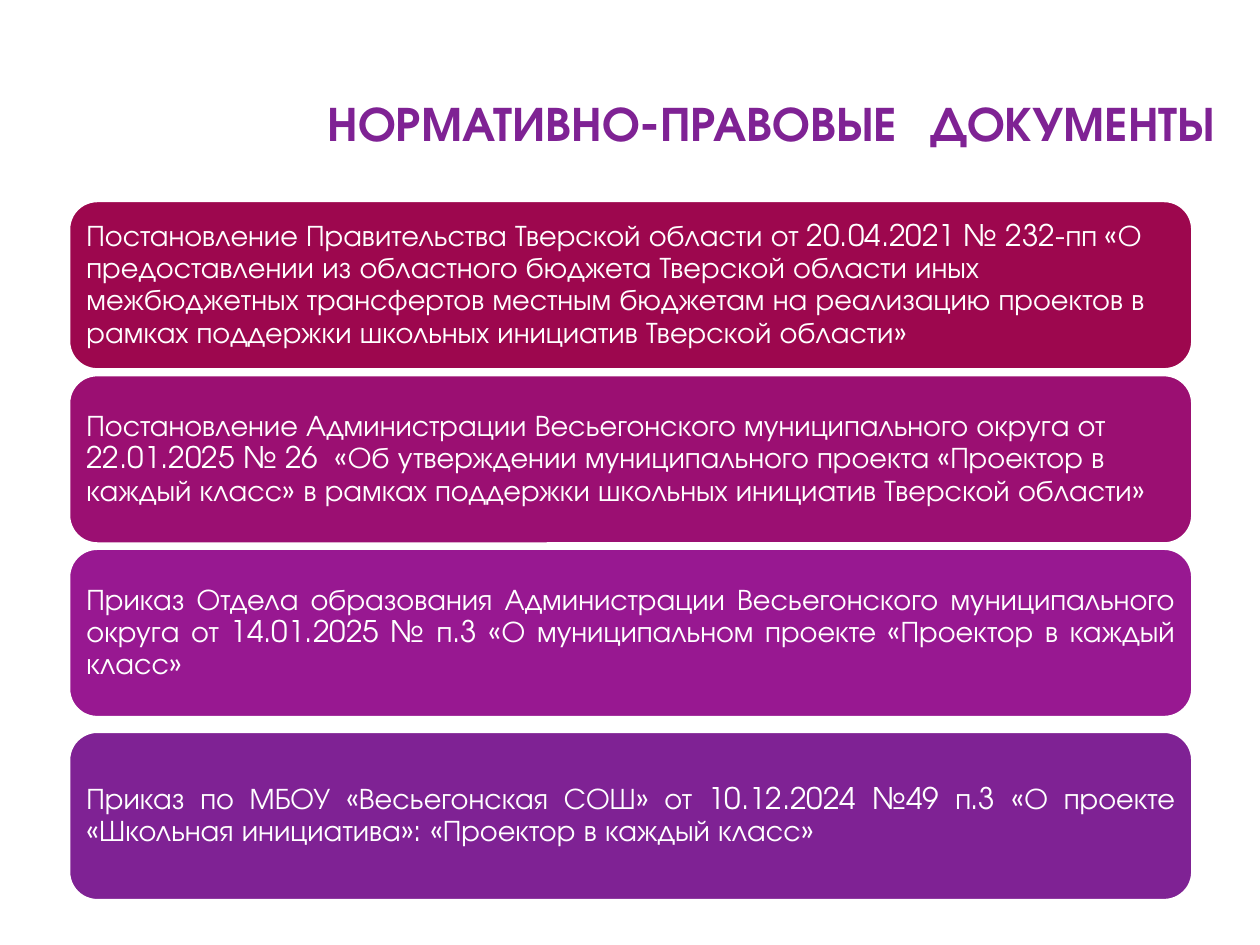
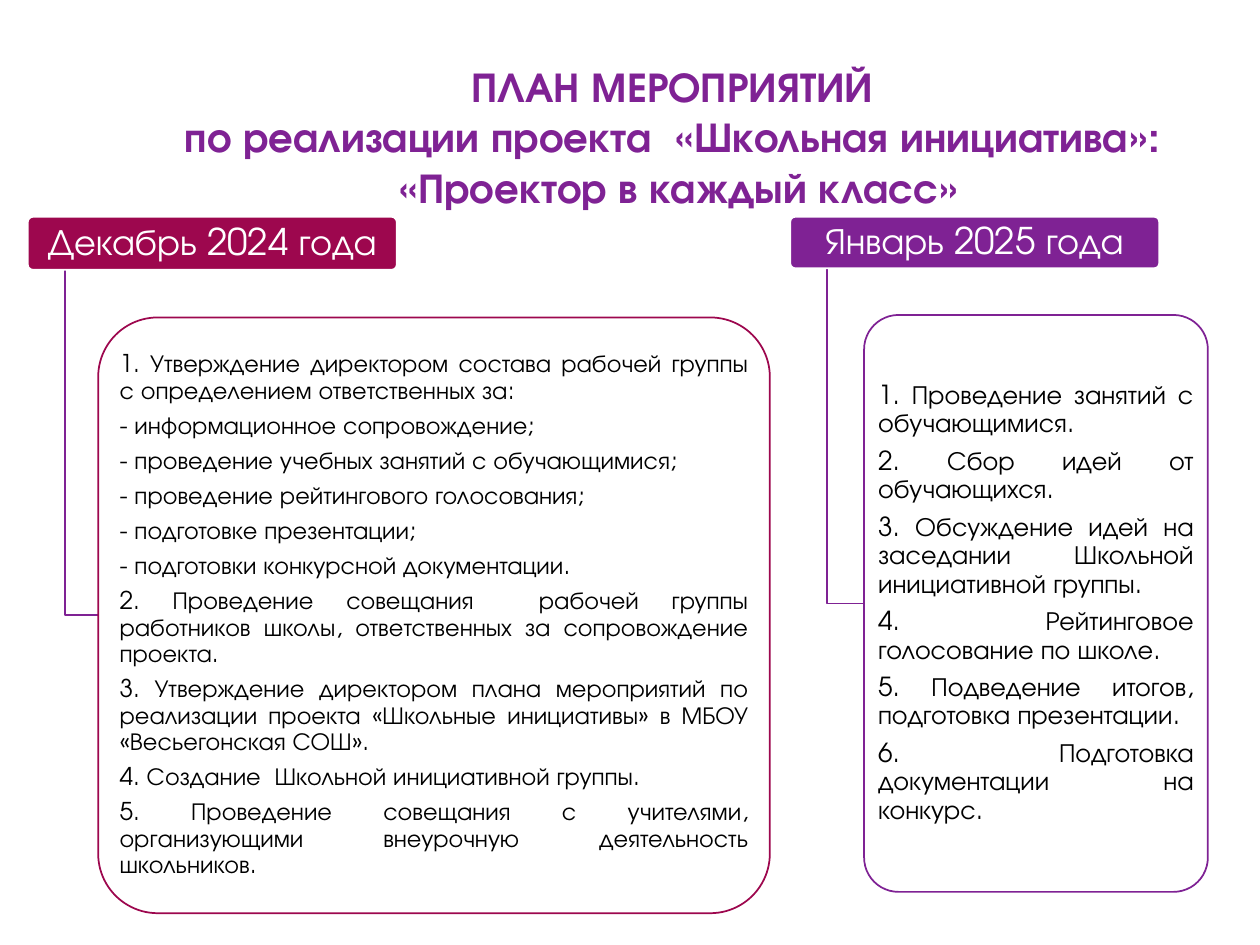
import pptx
import pptx.util
import pptx.dml.color
import pptx.enum.shapes
import pptx.enum.text
import lxml.etree

Cm = pptx.util.Cm
Pt = pptx.util.Pt
ALIGN = pptx.enum.text.PP_ALIGN
ROUNDED = pptx.enum.shapes.MSO_SHAPE.ROUNDED_RECTANGLE

FONT = "TeX Gyre Adventor"
WHITE, BLACK, CRIMSON, PURPLE = "FFFFFF", "000000", "9D074E", "7F2294"
TITLE_AREA = dict(inset_x=0.25, inset_y=0.13)


def colour(code):
    return pptx.dml.color.RGBColor.from_string(code)


def write(box, paragraphs, size, ink, align, inset_x, inset_y, bold=False, spacing=None):
    frame = box.text_frame
    frame_format = {
        "word_wrap": True,
        "vertical_anchor": pptx.enum.text.MSO_ANCHOR.MIDDLE,
        "margin_left": Cm(inset_x),
        "margin_right": Cm(inset_x),
        "margin_top": Cm(inset_y),
        "margin_bottom": Cm(inset_y),
    }
    for name, value in frame_format.items():
        setattr(frame, name, value)
    for index, spans in enumerate(paragraphs):
        para = frame.add_paragraph() if index else frame.paragraphs[0]
        para_format = {"alignment": align}
        if spacing:
            para_format |= {"line_spacing": spacing, "space_after": Pt(size * 0.35)}
        for name, value in para_format.items():
            setattr(para, name, value)
        if isinstance(spans, str):
            spans = [(spans, size)]
        for text, span_size in spans:
            for line_index, line in enumerate(text.split("\n")):
                if line_index:
                    para.add_line_break()
                span = para.add_run()
                span.text = line
                span_format = {"name": FONT, "size": Pt(span_size), "bold": bold}
                for name, value in span_format.items():
                    setattr(span.font, name, value)
                span.font.color.rgb = colour(ink)


deck = pptx.Presentation()
deck.slide_width, deck.slide_height = Cm(25.4), Cm(19.05)
blank = deck.slide_layouts[6]

page = deck.slides.add_slide(blank)
title = page.shapes.add_textbox(Cm(2.31), Cm(0.91), Cm(26.49), Cm(2.77))
title_spans = [("НОРМАТИВНО-ПРАВОВЫЕ ", 28), (" ", 40), ("ДОКУМЕНТЫ", 28)]
write(title, [title_spans], 28, PURPLE, ALIGN.CENTER, bold=True, **TITLE_AREA)

documents = [
    (4.06, CRIMSON, ALIGN.LEFT,
     "Постановление Правительства Тверской области от 20.04.2021 № 232-пп «О предоставлении "
     "из областного бюджета Тверской области иных межбюджетных трансфертов местным бюджетам "
     "на реализацию проектов в рамках поддержки школьных инициатив Тверской области»"),
    (7.57, "9B0F72", ALIGN.LEFT,
     "Постановление Администрации Весьегонского муниципального округа от 22.01.2025 № 26  "
     "«Об утверждении муниципального проекта «Проектор в каждый класс» в рамках поддержки "
     "школьных инициатив Тверской области»"),
    (11.07, "981891", ALIGN.JUSTIFY,
     "Приказ Отдела образования Администрации Весьегонского муниципального округа "
     "от 14.01.2025 № п.3 «О муниципальном проекте «Проектор в каждый класс»"),
    (14.76, PURPLE, ALIGN.JUSTIFY,
     "Приказ по МБОУ «Весьегонская СОШ» от 10.12.2024 №49 п.3 «О проекте "
     "«Школьная инициатива»: «Проектор в каждый класс»"),
]
for top, fill, align, text in documents:
    card = page.shapes.add_shape(ROUNDED, Cm(1.4), Cm(top), Cm(22.63), Cm(3.38))
    card.shadow.inherit = False
    card.fill.solid()
    card.fill.fore_color.rgb = colour(fill)
    card.line.color.rgb = colour(WHITE)
    card.line.width = Pt(1)
    write(card, [text], 17, WHITE, align, 0.18, 0.18, spacing=0.9)

page = deck.slides.add_slide(blank)
months = [
    dict(
        name="Декабрь 2024 года", accent=CRIMSON, size=14,
        head=(0.56, 4.37, 7.44, 1.07), body=(1.98, 6.4, 13.54, 12.01),
        steps=[
            "1. Утверждение директором состава рабочей группы с определением ответственных за:",
            "- информационное сопровождение;",
            "- проведение учебных занятий с обучающимися;",
            "- проведение рейтингового голосования;",
            "- подготовке презентации;",
            "- подготовки конкурсной документации.",
            "2. Проведение совещания  рабочей группы работников школы, "
            "ответственных за сопровождение проекта.",
            "3. Утверждение директором плана мероприятий по реализации проекта "
            "«Школьные инициативы» в МБОУ «Весьегонская СОШ».",
            "4. Создание  Школьной инициативной группы.",
            "5. Проведение совещания с учителями, "
            "организующими внеурочную деятельность\nшкольников.",
        ],
    ),
    dict(
        name="Январь 2025 года", accent=PURPLE, size=15,
        head=(15.93, 4.37, 7.44, 1.04), body=(17.42, 6.35, 6.93, 11.63),
        steps=[
            "1. Проведение занятий с обучающимися.",
            "2. Сбор идей от обучающихся.",
            "3. Обсуждение идей на заседании Школьной инициативной группы.",
            "4. Рейтинговое голосование по школе.",
            "5. Подведение итогов, подготовка презентации.",
            "6. Подготовка документации на конкурс.",
        ],
    ),
]
for month in months:
    left, top, width, height = month["head"]
    body_left, body_top, body_width, body_height = month["body"]

    elbow_x = Cm(left + width / 10)
    elbow_y = Cm(body_top + body_height / 2)
    outline = page.shapes.build_freeform(elbow_x, Cm(top + height))
    outline.add_line_segments([(elbow_x, elbow_y), (Cm(body_left), elbow_y)], close=False)
    elbow = outline.convert_to_shape()
    elbow.fill.background()

    head = page.shapes.add_shape(ROUNDED, *map(Cm, month["head"]))
    body = page.shapes.add_shape(ROUNDED, *map(Cm, month["body"]))
    for box, fill in ((head, month["accent"]), (body, WHITE)):
        box.adjustments[0] = 0.1
        box.fill.solid()
        box.fill.fore_color.rgb = colour(fill)
    for shape, line in ((elbow, PURPLE), (head, WHITE), (body, month["accent"])):
        shape.shadow.inherit = False
        shape.line.color.rgb = colour(line)
        shape.line.width = Pt(1)

    tint = body.fill._xPr.find(".//" + pptx.oxml.ns.qn("a:srgbClr"))
    lxml.etree.SubElement(tint, pptx.oxml.ns.qn("a:alpha"), val="90000")

    write(head, [month["name"]], 21, WHITE, ALIGN.CENTER, 0.1, 0.08, spacing=0.9)
    write(body, month["steps"], month["size"], BLACK, ALIGN.JUSTIFY, 0.08, 0.05, spacing=0.9)

title = page.shapes.add_textbox(Cm(1.3), Cm(1.52), Cm(24.51), Cm(2.44))
title_lines = [
    "ПЛАН МЕРОПРИЯТИЙ",
    "по реализации проекта  «Школьная инициатива»:",
    " «Проектор в каждый класс»",
]
write(title, title_lines, 24, PURPLE, ALIGN.CENTER, bold=True, **TITLE_AREA)

deck.save("out.pptx")
